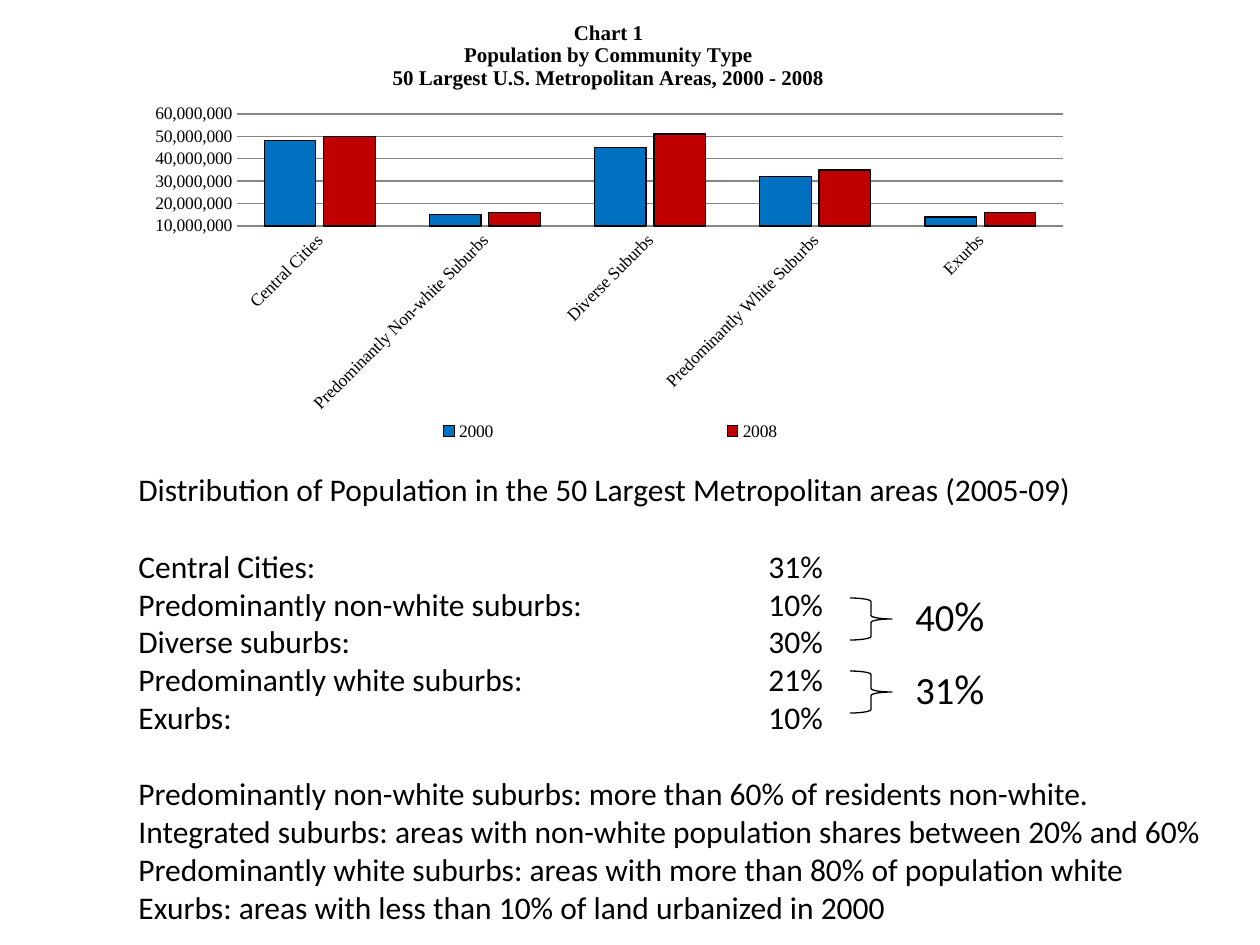
from dataclasses import dataclass

from lxml.etree import SubElement
from pptx import Presentation
from pptx.chart.data import CategoryChartData
from pptx.dml.color import RGBColor
from pptx.enum.chart import XL_CHART_TYPE, XL_LEGEND_POSITION, XL_TICK_MARK
from pptx.enum.shapes import MSO_SHAPE
from pptx.enum.text import MSO_ANCHOR
from pptx.oxml import parse_xml
from pptx.oxml.ns import nsdecls, qn
from pptx.util import Emu, Pt


@dataclass(frozen=True)
class Theme:
    body_font: str = "Calibri"
    chart_font: str = "Times New Roman"
    ink: RGBColor = RGBColor(0, 0, 0)
    grid: RGBColor = RGBColor(0x86, 0x86, 0x86)
    body_size: int = 18
    number_size: int = 22
    percent_size: int = 24
    axis_size: int = 10
    title_size: int = 12
    line_width: float = 0.75
    section_gap: int = 22


@dataclass(frozen=True)
class Box:
    left: int
    top: int
    width: int
    height: int


@dataclass(frozen=True)
class Year:
    name: str
    color: RGBColor
    millions: tuple


@dataclass(frozen=True)
class Share:
    number: str
    top: int


THEME = Theme()
CHART_BOX = Box(136, 0, 945, 462)
PLOT_BOX = Box(237, 114, 826, 112)
LEGEND_BOX = Box(215, 417, 790, 28)
CHART_TITLE = (
    "Chart 1\nPopulation by Community Type\n"
    "50 Largest U.S. Metropolitan Areas, 2000 - 2008"
)
COMMUNITIES = (
    "Central Cities",
    "Predominantly Non-white Suburbs",
    "Diverse Suburbs",
    "Predominantly White Suburbs",
    "Exurbs",
)
YEARS = (
    Year("2000", RGBColor(0x00, 0x70, 0xC0), (48, 15, 45, 32, 14)),
    Year("2008", RGBColor(0xC0, 0x00, 0x00), (50, 16, 51, 35, 16)),
)
SECTIONS = (
    ("Distribution of Population in the 50 Largest Metropolitan areas (2005-09)",),
    (
        "Central Cities:\t31%",
        "Predominantly non-white suburbs:\t10%",
        "Diverse suburbs:\t30%",
        "Predominantly white suburbs:\t21%",
        "Exurbs:\t10%",
    ),
    (
        "Predominantly non-white suburbs: more than 60% of residents non-white.",
        "Integrated suburbs: areas with non-white population shares between 20% and 60%",
        "Predominantly white suburbs: areas with more than 80% of population white",
        "Exurbs: areas with less than 10% of land urbanized in 2000",
    ),
)
SHARES = (Share("40", 557), Share("31", 630))


def px(length: int) -> Emu:
    return Emu(round(length * 914400 / 126))


def place(box: Box) -> tuple:
    return px(box.left), px(box.top), px(box.width), px(box.height)


def style_font(font, name: str, size: int, bold: bool = False) -> None:
    font.name = name
    font.size = Pt(size)
    font.bold = bold
    font.color.rgb = THEME.ink


def style_line(line, color: RGBColor) -> None:
    line.color.rgb = color
    line.width = Pt(THEME.line_width)


def make_layout(box: Box, inner: bool = False):
    target = '<c:layoutTarget val="inner"/>' if inner else ""
    values = {
        "x": (box.left - CHART_BOX.left) / CHART_BOX.width,
        "y": (box.top - CHART_BOX.top) / CHART_BOX.height,
        "w": box.width / CHART_BOX.width,
        "h": box.height / CHART_BOX.height,
    }
    modes = '<c:xMode val="edge"/><c:yMode val="edge"/>'
    sizes = "".join(f'<c:{key} val="{value:.3f}"/>' for key, value in values.items())
    return parse_xml(
        f"<c:layout {nsdecls('c')}><c:manualLayout>{target}{modes}{sizes}"
        "</c:manualLayout></c:layout>"
    )


def set_layout(parent, layout, index: int) -> None:
    for existing in parent.findall(qn("c:layout")):
        parent.remove(existing)
    parent.insert(index, layout)


def style_axes(chart) -> None:
    values, categories = chart.value_axis, chart.category_axis
    for axis in (values, categories):
        axis.major_tick_mark = XL_TICK_MARK.NONE
        axis.minor_tick_mark = XL_TICK_MARK.NONE
        style_font(axis.tick_labels.font, THEME.chart_font, THEME.axis_size)
    style_line(categories.format.line, THEME.grid)
    categories._element.txPr.find(qn("a:bodyPr")).set("rot", "-2700000")
    values.minimum_scale = 10_000_000
    values.maximum_scale = 60_000_000
    values.major_unit = 10_000_000
    values.tick_labels.number_format = "#,##0"
    values.tick_labels.number_format_is_linked = False
    values.format.line.fill.background()
    style_line(values.major_gridlines.format.line, THEME.grid)


def add_population_chart(page) -> None:
    data = CategoryChartData(number_format="#,##0")
    data.categories = COMMUNITIES
    for year in YEARS:
        data.add_series(year.name, [value * 1_000_000 for value in year.millions])
    chart = page.shapes.add_chart(
        XL_CHART_TYPE.COLUMN_CLUSTERED, *place(CHART_BOX), data
    ).chart
    style_font(chart.font, THEME.body_font, THEME.axis_size)
    chart.has_title = True
    title_frame = chart.chart_title.text_frame
    title_frame.text = CHART_TITLE
    for para in title_frame.paragraphs:
        for span in para.runs:
            style_font(span.font, THEME.chart_font, THEME.title_size, True)
    chart.chart_title.include_in_layout = False
    plot = chart.plots[0]
    plot.gap_width = 105
    plot.overlap = -15
    plot.vary_by_categories = False
    for series, year in zip(plot.series, YEARS):
        series.format.fill.solid()
        series.format.fill.fore_color.rgb = year.color
        style_line(series.format.line, THEME.ink)
    style_axes(chart)
    chart.has_legend = True
    legend = chart.legend
    legend.position = XL_LEGEND_POSITION.BOTTOM
    legend.include_in_layout = False
    style_font(legend.font, THEME.chart_font, THEME.axis_size)
    set_layout(legend._element, make_layout(LEGEND_BOX), 1)
    plot_area = chart._chartSpace.chart.plotArea
    set_layout(plot_area, make_layout(PLOT_BOX, inner=True), 0)


def add_text_frame(page, box: Box):
    frame = page.shapes.add_textbox(*place(box)).text_frame
    frame.word_wrap = True
    frame.vertical_anchor = MSO_ANCHOR.MIDDLE
    return frame


def add_distribution(page) -> None:
    frame = add_text_frame(page, Box(126, 451, 1166, 494))
    frame.text = "\n".join(line for section in SECTIONS for line in section)
    starts = [line for section in SECTIONS[1:] for line in section[:1]]
    for para in frame.paragraphs:
        if para.text in starts:
            para.space_before = Pt(THEME.section_gap)
        if "\t" in para.text:
            tabs = SubElement(para._p.get_or_add_pPr(), qn("a:tabLst"))
            SubElement(tabs, qn("a:tab"), pos=str(px(630)), algn="l")
        for span in para.runs:
            style_font(span.font, THEME.body_font, THEME.body_size)


def add_share(page, share: Share) -> None:
    brace_box = Box(850, share.top + 41, 42, 42)
    brace = page.shapes.add_shape(MSO_SHAPE.RIGHT_BRACE, *place(brace_box))
    brace.shadow.inherit = False
    brace.fill.background()
    style_line(brace.line, THEME.ink)
    para = add_text_frame(page, Box(903, share.top, 105, 116)).paragraphs[0]
    for text, size in ((share.number, THEME.number_size), ("%", THEME.percent_size)):
        span = para.add_run()
        span.text = text
        style_font(span.font, THEME.body_font, size)


def main() -> None:
    deck = Presentation()
    deck.slide_width, deck.slide_height = px(1260), px(945)
    page = deck.slides.add_slide(deck.slide_layouts[6])
    add_distribution(page)
    for share in SHARES:
        add_share(page, share)
    add_population_chart(page)
    deck.save("out.pptx")


if __name__ == "__main__":
    main()
